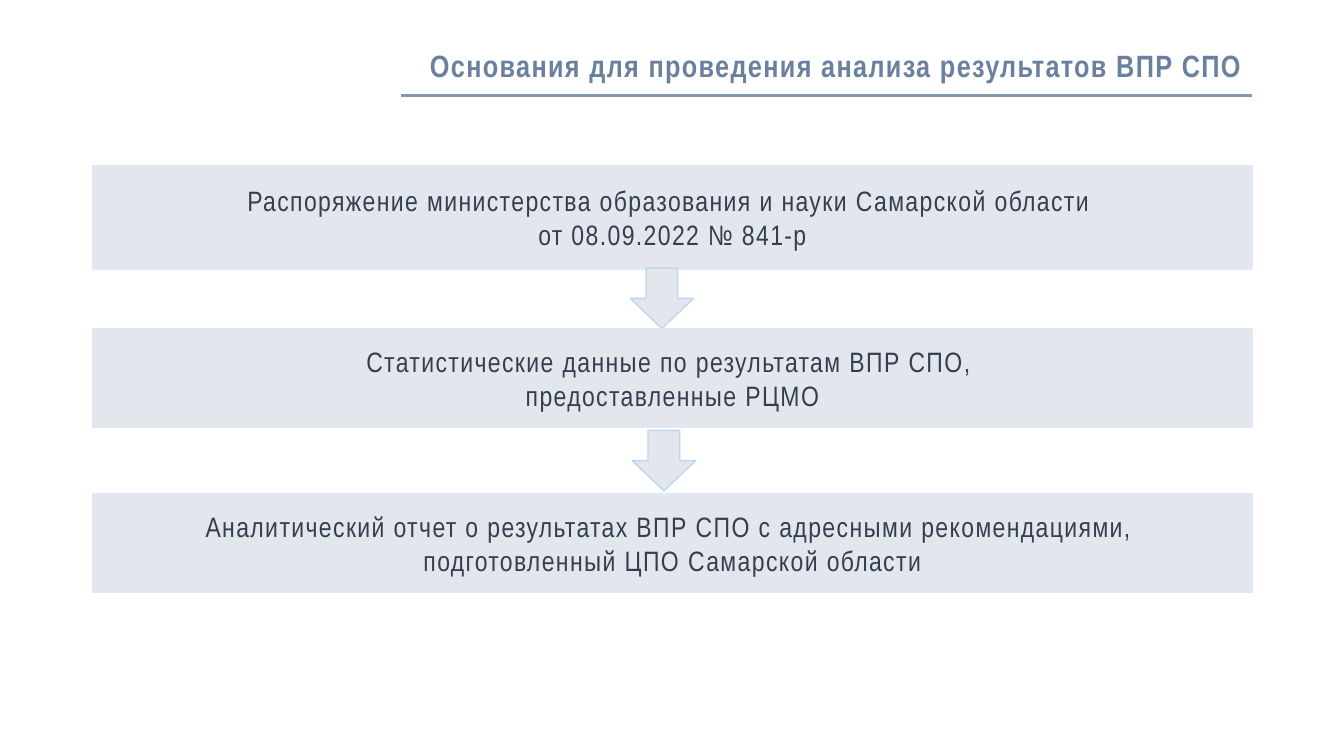
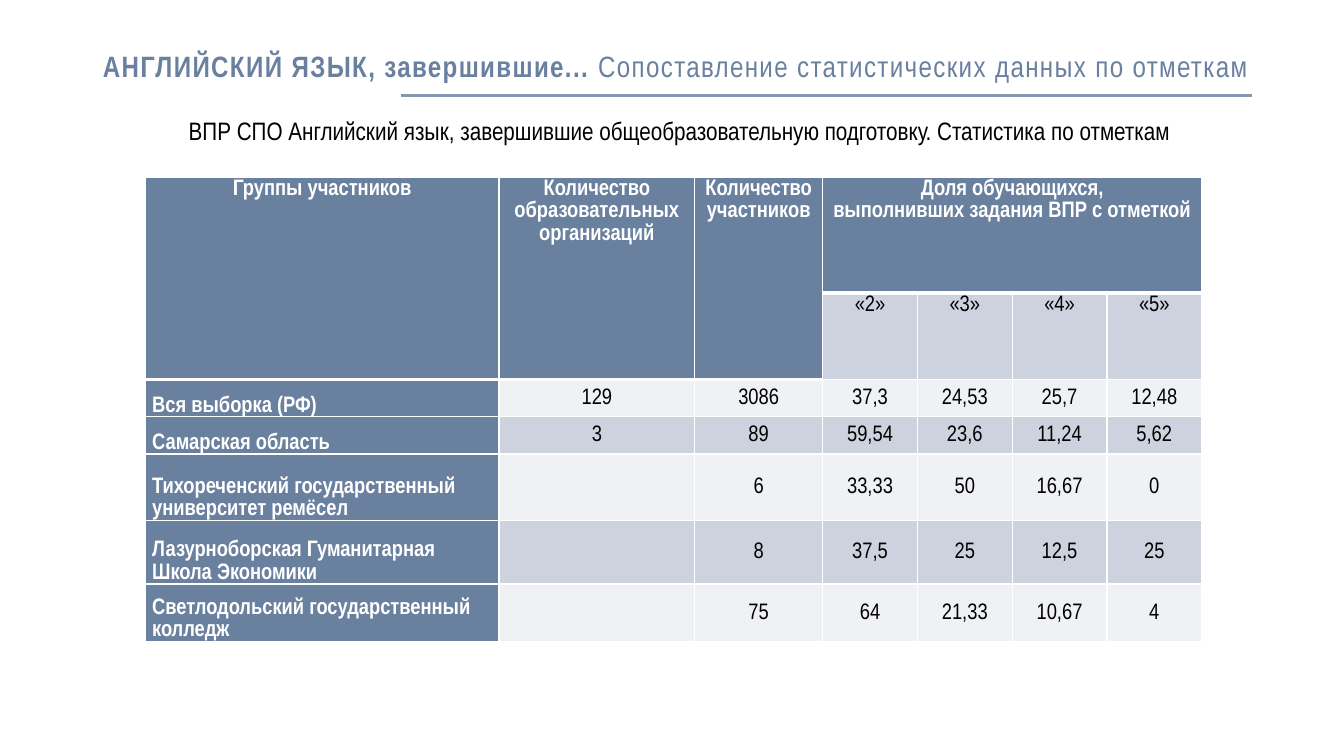
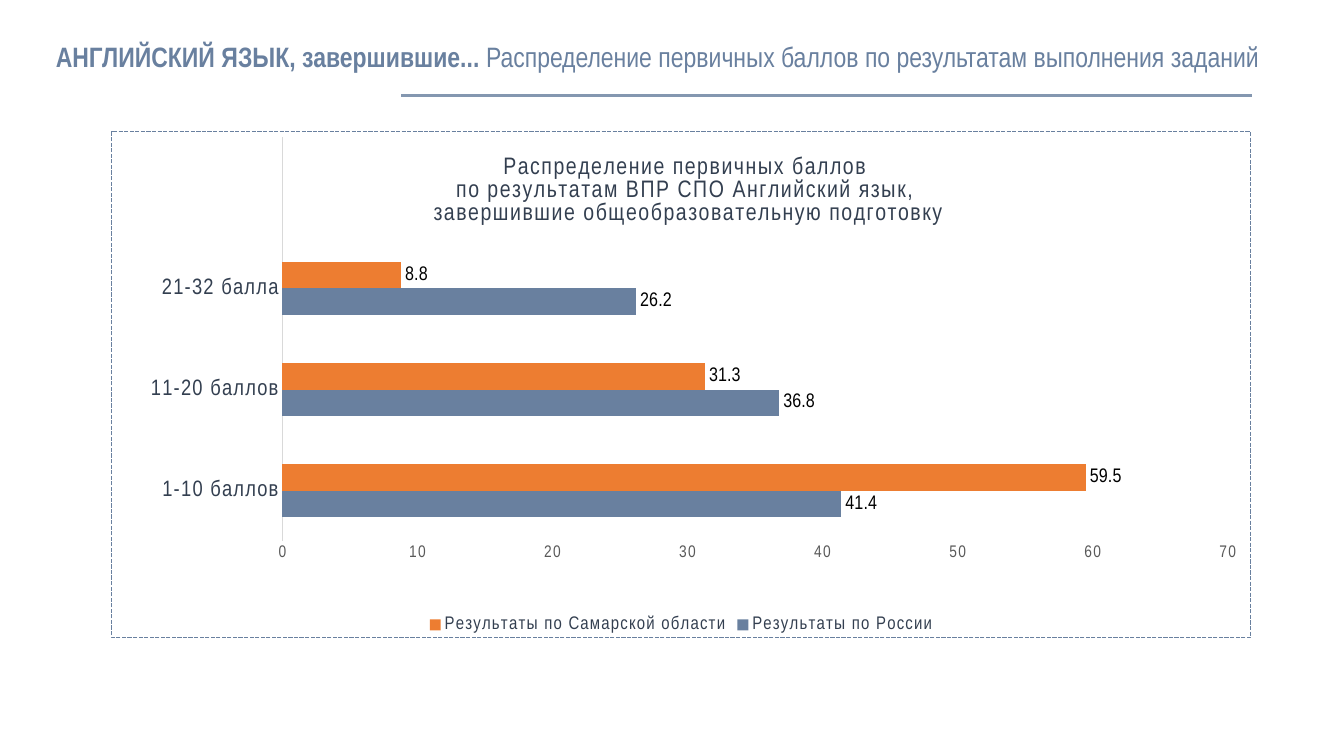
from dataclasses import dataclass
from typing import Any

from lxml.etree import SubElement
from pptx import Presentation
from pptx.chart.data import CategoryChartData
from pptx.dml.color import RGBColor
from pptx.enum.chart import XL_CHART_TYPE, XL_LABEL_POSITION, XL_LEGEND_POSITION, XL_TICK_MARK
from pptx.enum.shapes import MSO_CONNECTOR, MSO_SHAPE
from pptx.enum.text import MSO_ANCHOR, MSO_AUTO_SIZE, PP_ALIGN
from pptx.oxml import parse_xml
from pptx.oxml.ns import nsdecls, qn
from pptx.util import Emu, Pt

PX = 9144
FONT = "Arial Narrow"
TITLE_ONLY = 5

STEEL = RGBColor(0x69, 0x80, 0x9F)
RULE = RGBColor(0x84, 0x97, 0xB0)
PALE = RGBColor(0xE3, 0xE7, 0xED)
BOX_EDGE = RGBColor(0xDE, 0xEB, 0xF7)
ARROW_EDGE = RGBColor(0xBD, 0xD7, 0xEE)
NAVY = RGBColor(0x33, 0x3F, 0x50)
BAND_DARK = RGBColor(0xCC, 0xD3, 0xDE)
BAND_LIGHT = RGBColor(0xEF, 0xF1, 0xF5)
ORANGE = RGBColor(0xED, 0x7D, 0x31)
GREY = RGBColor(0x59, 0x59, 0x59)
AXIS = RGBColor(0xD9, 0xD9, 0xD9)
BLACK = RGBColor(0, 0, 0)
WHITE = RGBColor(0xFF, 0xFF, 0xFF)


@dataclass(frozen=True)
class Box:
    x: int
    y: int
    w: int
    h: int

    def emu(self) -> tuple[Emu, Emu, Emu, Emu]:
        return px(self.x), px(self.y), px(self.w), px(self.h)


@dataclass(frozen=True)
class Style:
    size: int
    color: RGBColor
    bold: bool = False
    spacing: int = 0


@dataclass(frozen=True)
class Block:
    box: Box
    shape: MSO_SHAPE
    edge: RGBColor
    lines: tuple[str, ...] = ()


@dataclass(frozen=True)
class Group:
    name: str
    values: tuple[str, ...]


@dataclass(frozen=True)
class Series:
    name: str
    values: tuple[float | None, ...]
    color: RGBColor


BODY = Style(20, NAVY, spacing=1)
HEAD = Style(16, WHITE, bold=True)
CELL = Style(16, BLACK)

BLOCKS = (
    Block(Box(92, 164, 1150, 103), MSO_SHAPE.RECTANGLE, BOX_EDGE, (
        "Распоряжение министерства образования и науки Самарской области ",
        "от 08.09.2022 № 841-р")),
    Block(Box(625, 266, 63, 60), MSO_SHAPE.DOWN_ARROW, ARROW_EDGE),
    Block(Box(92, 326, 1150, 98), MSO_SHAPE.RECTANGLE, BOX_EDGE, (
        "Статистические данные по результатам ВПР СПО, ",
        "предоставленные РЦМО")),
    Block(Box(92, 490, 1150, 98), MSO_SHAPE.RECTANGLE, BOX_EDGE, (
        "Аналитический отчет о результатах ВПР СПО с адресными рекомендациями, ",
        "подготовленный ЦПО Самарской области")),
    Block(Box(627, 427, 63, 60), MSO_SHAPE.DOWN_ARROW, ARROW_EDGE),
)

COLUMNS = (351, 194, 127, 94, 94, 94, 94)
ROWS = (115, 85, 37, 37, 66, 63, 57)
HEADINGS = (
    "Группы участников",
    "Количество образовательных организаций",
    "Количество участников",
    "Доля обучающихся,\vвыполнивших задания ВПР с отметкой",
)
MARKS = ("«2»", "«3»", "«4»", "«5»")
GROUPS = (
    Group("Вся выборка (РФ)", ("129", "3086", "37,3", "24,53", "25,7", "12,48")),
    Group("Самарская область", ("3", "89", "59,54", "23,6", "11,24", "5,62")),
    Group("Тихореченский государственный университет ремёсел",
          ("", "6", "33,33", "50", "16,67", "0")),
    Group("Лазурноборская Гуманитарная Школа Экономики",
          ("", "8", "37,5", "25", "12,5", "25")),
    Group("Светлодольский государственный колледж",
          ("", "75", "64", "21,33", "10,67", "4")),
)

CATEGORIES = ("1-10 баллов", "11-20 баллов", "21-32 балла", "")
SERIES = (
    Series("Результаты по России", (41.4, 36.8, 26.2, None), STEEL),
    Series("Результаты по Самарской области", (59.5, 31.3, 8.8, None), ORANGE),
)
CHART_TITLE = (
    "Распределение первичных баллов ",
    "по результатам ВПР СПО Английский язык, ",
    "завершившие общеобразовательную подготовку",
)


def px(n: int) -> Emu:
    return Emu(n * PX)


def style_font(font: Any, style: Style) -> None:
    font.name = FONT
    font.size = Pt(style.size)
    font.bold = style.bold
    font.color.rgb = style.color
    if style.spacing:
        font._rPr.set("spc", str(style.spacing * 100))


def add_run(p: Any, text: str, style: Style) -> None:
    for i, part in enumerate(text.split("\v")):
        if i:
            p.add_line_break()
        r = p.add_run()
        r.text = part
        style_font(r.font, style)


def add_lines(tf: Any, lines: tuple[str, ...], style: Style) -> None:
    for i, line in enumerate(lines):
        p = tf.add_paragraph() if i else tf.paragraphs[0]
        p.alignment = PP_ALIGN.CENTER
        add_run(p, line, style)


def add_titled_slide(prs: Any, box: Box, align: PP_ALIGN,
                     runs: tuple[tuple[str, Style], ...]) -> Any:
    s = prs.slides.add_slide(prs.slide_layouts[TITLE_ONLY])
    title = s.shapes.title
    title.left, title.top, title.width, title.height = box.emu()
    tf = title.text_frame
    tf.word_wrap = True
    tf.auto_size = MSO_AUTO_SIZE.NONE
    tf.vertical_anchor = MSO_ANCHOR.MIDDLE
    p = tf.paragraphs[0]
    p.alignment = align
    p.line_spacing = 0.9
    for text, style in runs:
        add_run(p, text, style)

    rule = s.shapes.add_connector(MSO_CONNECTOR.STRAIGHT, px(398), px(95), px(1242), px(95))
    rule.line.color.rgb = RULE
    rule.line.width = Pt(2.25)
    SubElement(rule._element.spPr, qn("a:effectLst"))
    return s


def add_block(shapes: Any, block: Block) -> None:
    sp = shapes.add_shape(block.shape, *block.box.emu())
    sp.shadow.inherit = False
    sp.fill.solid()
    sp.fill.fore_color.rgb = PALE
    sp.line.color.rgb = block.edge
    sp.line.width = Pt(1)
    tf = sp.text_frame
    tf.word_wrap = True
    tf.vertical_anchor = MSO_ANCHOR.MIDDLE
    add_lines(tf, block.lines, BODY)


def set_borders(cell: Any, bottom: int) -> None:
    tc_pr = cell._tc.get_or_add_tcPr()
    for i, (side, width) in enumerate((("L", 1), ("R", 1), ("T", 1), ("B", bottom))):
        tc_pr.insert(i, parse_xml(
            f'<a:ln{side} {nsdecls("a")} w="{Pt(width)}"><a:solidFill>'
            f'<a:srgbClr val="{WHITE}"/></a:solidFill></a:ln{side}>'))


def fill_cell(cell: Any, text: str, style: Style, fill: RGBColor, anchor: MSO_ANCHOR,
              align: PP_ALIGN = PP_ALIGN.CENTER) -> None:
    cell.fill.solid()
    cell.fill.fore_color.rgb = fill
    cell.vertical_anchor = anchor
    cell.margin_left = cell.margin_right = px(7)
    cell.margin_top = cell.margin_bottom = 0
    p = cell.text_frame.paragraphs[0]
    p.alignment = align
    p.line_spacing = 1.07
    p.space_before = p.space_after = Pt(1)
    if text:
        add_run(p, text, style)


def add_marks_table(s: Any, box: Box) -> None:
    table = s.shapes.add_table(len(ROWS), len(COLUMNS), *box.emu()).table
    table.first_row = table.horz_banding = False
    for column, width in zip(table.columns, COLUMNS):
        column.width = px(width)
    for row, height in zip(table.rows, ROWS):
        row.height = px(height)

    for c, heading in enumerate(HEADINGS):
        fill_cell(table.cell(0, c), heading, HEAD, STEEL, MSO_ANCHOR.TOP)
    for c, mark in enumerate(MARKS, 3):
        fill_cell(table.cell(1, c), mark, CELL, BAND_DARK, MSO_ANCHOR.TOP)
    for r, group in enumerate(GROUPS, 2):
        band = BAND_DARK if r % 2 else BAND_LIGHT
        fill_cell(table.cell(r, 0), group.name, HEAD, STEEL, MSO_ANCHOR.BOTTOM, PP_ALIGN.LEFT)
        for c, value in enumerate(group.values, 1):
            fill_cell(table.cell(r, c), value, CELL, band, MSO_ANCHOR.MIDDLE)

    for r in range(len(ROWS)):
        for c in range(len(COLUMNS)):
            heading = r == 0 or (r == 1 and c < 3)
            set_borders(table.cell(r, c), 3 if heading else 1)
    for c in range(3):
        table.cell(0, c).merge(table.cell(1, c))
    table.cell(0, 3).merge(table.cell(0, 6))


def set_layout(parent: Any, index: int, target: str, **sizes: float) -> None:
    for old in parent.findall(qn("c:layout")):
        parent.remove(old)
    layout = parse_xml(f'<c:layout {nsdecls("c")}><c:manualLayout/></c:layout>')
    manual = layout[0]
    if target:
        SubElement(manual, qn("c:layoutTarget")).set("val", target)
    for mode in ("xMode", "yMode"):
        SubElement(manual, qn(f"c:{mode}")).set("val", "edge")
    for name, value in sizes.items():
        SubElement(manual, qn(f"c:{name}")).set("val", str(value))
    parent.insert(index, layout)


def add_scores_chart(s: Any, box: Box) -> None:
    data = CategoryChartData()
    data.categories = CATEGORIES
    for item in SERIES:
        data.add_series(item.name, item.values)
    chart = s.shapes.add_chart(XL_CHART_TYPE.BAR_CLUSTERED, *box.emu(), data).chart
    chart.font.name = "Calibri"
    chart.font.size = Pt(10)
    chart.font.color.rgb = BLACK

    chart.has_title = True
    add_lines(chart.chart_title.text_frame, CHART_TITLE, Style(17, NAVY, spacing=1))
    chart.has_legend = True
    chart.legend.position = XL_LEGEND_POSITION.BOTTOM
    chart.legend.include_in_layout = False
    style_font(chart.legend.font, Style(13, NAVY, spacing=1))

    for axis, style in ((chart.category_axis, Style(16, NAVY, spacing=1)),
                        (chart.value_axis, Style(12, GREY, spacing=1))):
        axis.has_major_gridlines = False
        axis.major_tick_mark = axis.minor_tick_mark = XL_TICK_MARK.NONE
        style_font(axis.tick_labels.font, style)
    chart.category_axis.format.line.color.rgb = AXIS
    chart.category_axis.format.line.width = Pt(0.75)
    chart.value_axis.format.line.fill.background()
    chart.value_axis.minimum_scale = 0
    chart.value_axis.maximum_scale = 70
    chart.value_axis.major_unit = 10

    plot = chart.plots[0]
    plot.vary_by_categories = False
    plot.gap_width = 182
    plot.overlap = 0
    for series, item in zip(plot.series, SERIES):
        series.format.fill.solid()
        series.format.fill.fore_color.rgb = item.color
        labels = series.data_labels
        labels.show_value = True
        labels.position = XL_LABEL_POSITION.OUTSIDE_END
        style_font(labels.font, Style(14, BLACK))

    root = chart._chartSpace.find(qn("c:chart"))
    set_layout(root.find(qn("c:title")), 1, "", x=0.28, y=0.04)
    set_layout(root.find(qn("c:plotArea")), 0, "inner", x=0.15, y=0.01, w=0.83, h=0.8)
    root.addnext(parse_xml(
        f'<c:spPr {nsdecls("c", "a")}><a:noFill/><a:ln w="{Pt(1)}"><a:solidFill>'
        f'<a:srgbClr val="{STEEL}"/></a:solidFill><a:prstDash val="sysDash"/></a:ln></c:spPr>'))


def build_grounds(prs: Any) -> None:
    s = add_titled_slide(prs, Box(178, 40, 1064, 55), PP_ALIGN.RIGHT, (
        ("Основания для проведения анализа результатов ВПР СПО", Style(22, STEEL, True, 1)),))
    group = s.shapes.add_group_shape()
    for block in BLOCKS:
        add_block(group.shapes, block)


def build_marks(prs: Any) -> None:
    s = add_titled_slide(prs, Box(92, 40, 1165, 55), PP_ALIGN.JUSTIFY, (
        ("АНГЛИЙСКИЙ ЯЗЫК, завершившие... ", Style(21, STEEL, True, 1)),
        ("Сопоставление статистических данных по отметкам", Style(21, STEEL, spacing=1))))
    tf = s.shapes.add_textbox(*Box(99, 107, 1150, 43).emu()).text_frame
    tf.word_wrap = True
    add_lines(tf, ("ВПР СПО Английский язык, завершившие общеобразовательную подготовку. "
                   "Статистика по отметкам",), Style(18, BLACK))
    tf.paragraphs[0].line_spacing = 1.07
    add_marks_table(s, Box(144, 176, sum(COLUMNS), sum(ROWS)))


def build_scores(prs: Any) -> None:
    s = add_titled_slide(prs, Box(36, 18, 1223, 80), PP_ALIGN.RIGHT, (
        ("АНГЛИЙСКИЙ ЯЗЫК, завершившие... ", Style(20, STEEL, True)),
        ("Распределение первичных баллов по результатам выполнения заданий", Style(20, STEEL))))
    add_scores_chart(s, Box(110, 130, 1131, 503))


def main() -> None:
    prs = Presentation()
    prs.slide_width = px(1333)
    prs.slide_height = px(750)
    build_grounds(prs)
    build_marks(prs)
    build_scores(prs)
    prs.save("out.pptx")


if __name__ == "__main__":
    main()
